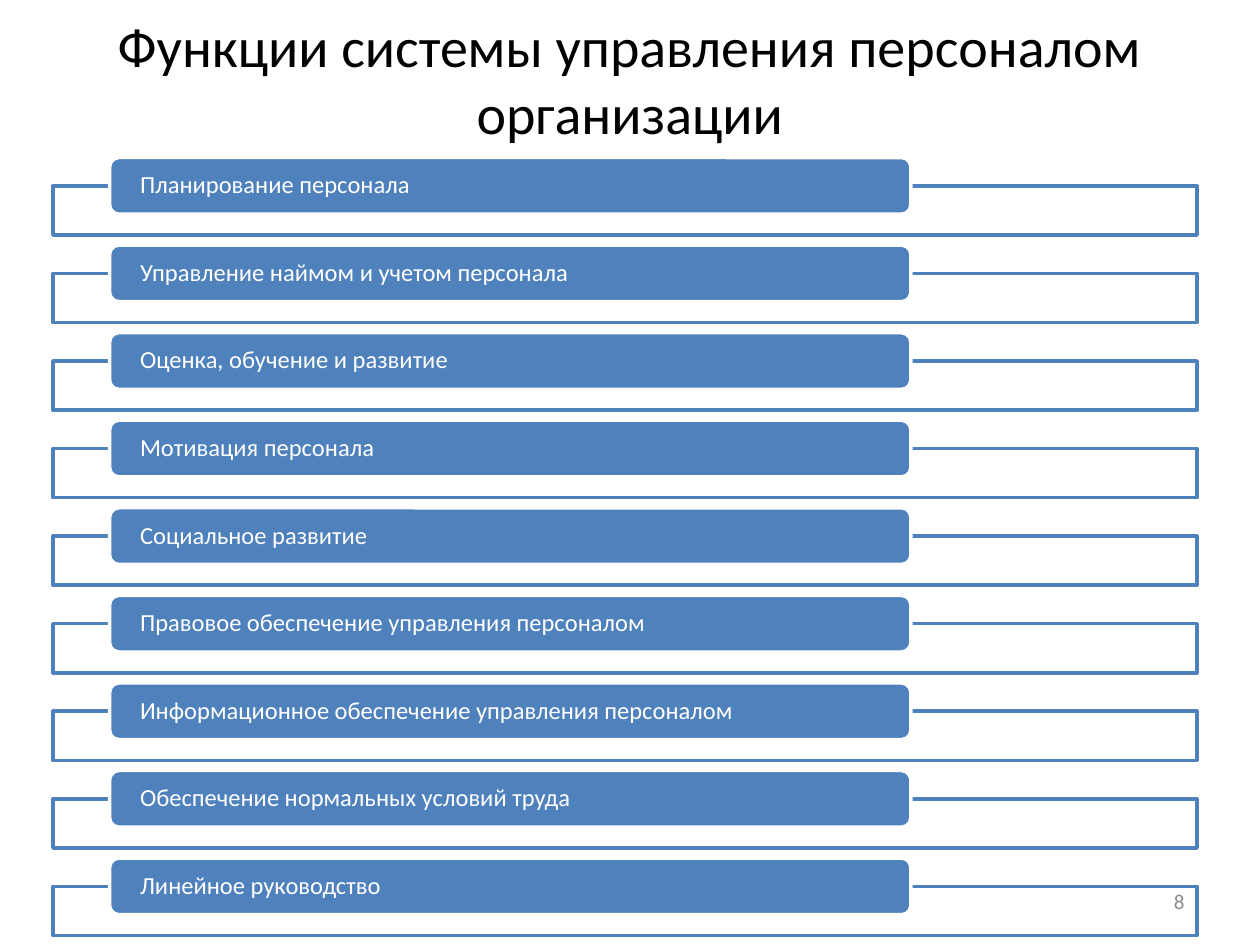
from lxml.etree import SubElement
from pptx import Presentation
from pptx.dml.color import RGBColor
from pptx.enum.shapes import MSO_SHAPE
from pptx.enum.text import MSO_ANCHOR, PP_ALIGN
from pptx.oxml.ns import qn
from pptx.util import Inches, Pt

FONT = "Calibri"
COLORS = {"blue": "4F81BD", "white": "FFFFFF", "black": "000000", "gray": "8C8C8C"}
FUNCTIONS = [
    "Планирование персонала",
    "Управление наймом и учетом персонала",
    "Оценка, обучение и развитие",
    "Мотивация персонала",
    "Социальное развитие",
    "Правовое обеспечение управления персоналом",
    "Информационное обеспечение управления персоналом",
    "Обеспечение нормальных условий труда",
    "Линейное руководство",
]
FIRST_TOP, LAST_TOP = 1.25, 6.81
ROW_STEP = (LAST_TOP - FIRST_TOP) / (len(FUNCTIONS) - 1)
FRAME_OFFSET = 0.225


def color(name):
    return RGBColor.from_string(COLORS[name])


def set_text(shape, text, size, color_name, alignment):
    text_frame = shape.text_frame
    text_frame.text = text
    text_frame.word_wrap = True
    text_frame.vertical_anchor = MSO_ANCHOR.MIDDLE
    paragraph = text_frame.paragraphs[0]
    paragraph.alignment = alignment
    font = paragraph.runs[0].font
    font.name = FONT
    font.size = Pt(size)
    font.color.rgb = color(color_name)


def add_text(slide, left, top, width, height, text, size, color_name, alignment):
    box = slide.shapes.add_textbox(Inches(left), Inches(top), Inches(width), Inches(height))
    set_text(box, text, size, color_name, alignment)


def add_box(shapes, kind, left, top, width, height, fill, line):
    shape = shapes.add_shape(kind, Inches(left), Inches(top), Inches(width), Inches(height))
    shape.shadow.inherit = False
    shape.fill.solid()
    shape.fill.fore_color.rgb = color(fill)
    shape.line.color.rgb = color(line)
    shape.line.width = Pt(2)
    return shape


def set_opacity(shape, percent):
    fill_color = shape.fill._xPr.find(qn("a:solidFill"))[0]
    SubElement(fill_color, qn("a:alpha"), val=str(percent * 1000))


def add_function_row(shapes, top, text):
    """Add a wide outlined frame with a filled label over its top edge."""
    frame = add_box(shapes, MSO_SHAPE.RECTANGLE, 0.42, top + FRAME_OFFSET, 9.08, 0.39,
                    "white", "blue")
    set_opacity(frame, 90)
    label = add_box(shapes, MSO_SHAPE.ROUNDED_RECTANGLE, 0.87, top, 6.36, 0.45,
                    "blue", "white")
    set_text(label, text, 14, "white", PP_ALIGN.LEFT)
    text_frame = label.text_frame
    text_frame.margin_left = text_frame.margin_right = Inches(0.22)
    text_frame.margin_top = text_frame.margin_bottom = 0
    text_frame.paragraphs[0].line_spacing = 0.9


def main():
    presentation = Presentation()
    presentation.slide_width = Inches(10)
    presentation.slide_height = Inches(7.5)
    slide = presentation.slides.add_slide(presentation.slide_layouts[6])

    add_text(slide, 0.5, 0, 9, 1.25, "Функции системы управления персоналом организации",
             32, "black", PP_ALIGN.CENTER)
    group = slide.shapes.add_group_shape()
    for index, text in enumerate(FUNCTIONS):
        add_function_row(group.shapes, FIRST_TOP + index * ROW_STEP, text)
    add_text(slide, 7.17, 6.95, 2.33, 0.4, "8", 12, "gray", PP_ALIGN.RIGHT)

    presentation.save("out.pptx")


if __name__ == "__main__":
    main()
